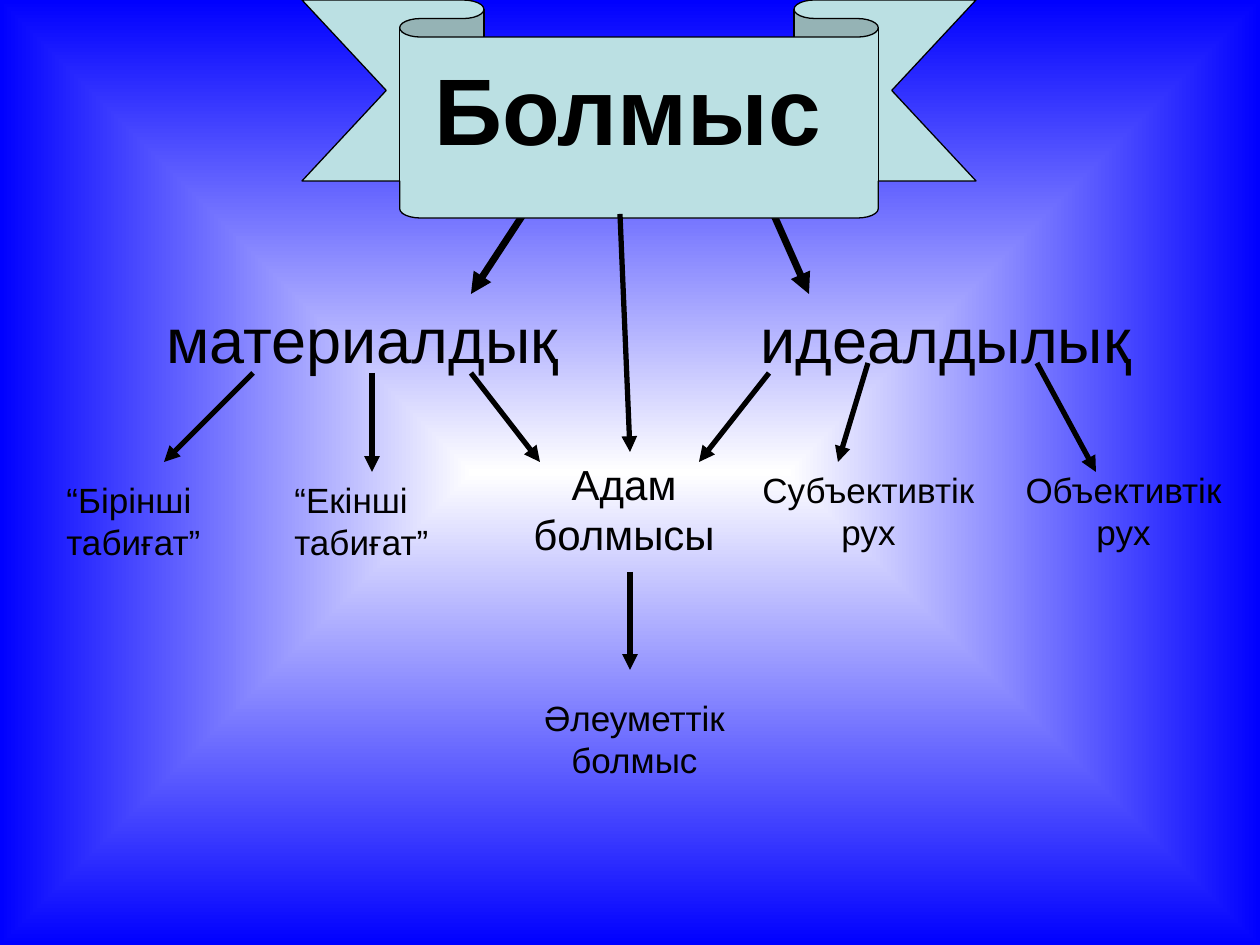
from lxml import etree
from pptx import Presentation
from pptx.dml.color import RGBColor
from pptx.enum.shapes import MSO_CONNECTOR, MSO_SHAPE
from pptx.enum.text import PP_ALIGN
from pptx.oxml import parse_xml
from pptx.oxml.ns import nsdecls, qn
from pptx.util import Pt

STRAIGHT = MSO_CONNECTOR.STRAIGHT
RIBBON = MSO_SHAPE.DOWN_RIBBON
LEFT, CENTER = PP_ALIGN.LEFT, PP_ALIGN.CENTER

BLACK = RGBColor(0, 0, 0)
WHITE = RGBColor(255, 255, 255)
BLUE = RGBColor(0, 0, 255)
PALE = RGBColor(0xBB, 0xE0, 0xE3)
FONT = "Arial"
SCALE = 914400 / 126


def px(n):
    return round(n * SCALE)


def label(slide, box, text, size, align=LEFT, bold=False):
    frame = slide.shapes.add_textbox(*map(px, box)).text_frame
    frame.word_wrap = True
    para = frame.paragraphs[0]
    para.text = text
    para.alignment = align
    font = para.font
    font.name, font.size, font.bold = FONT, Pt(size), bold
    font.color.rgb = BLACK


def arrow(slide, ends, width=3):
    link = slide.shapes.add_connector(STRAIGHT, *map(px, ends))
    link.line.color.rgb = BLACK
    link.line.width = Pt(width)
    etree.SubElement(link.line._get_or_add_ln(), qn("a:tailEnd"), type="triangle")
    etree.SubElement(link._element.spPr, qn("a:effectLst"))


def backdrop(slide):
    fill = slide.background.fill
    fill.gradient()
    for stop, color, place in zip(fill.gradient_stops, (WHITE, BLUE), (0, 1)):
        stop.color.rgb = color
        stop.position = place
    # Rectangular gradient that spreads from the centre
    lin = next(slide.background._cSld.iter(qn("a:lin")))
    lin.getparent().replace(lin, parse_xml(
        f'<a:path {nsdecls("a")} path="shape">'
        '<a:fillToRect l="50000" t="50000" r="50000" b="50000"/></a:path>'))


def banner(slide, box, text):
    x, y, w, h = box
    shape = slide.shapes.add_shape(RIBBON, *map(px, box))
    shape.shadow.inherit = False
    shape.adjustments[0], shape.adjustments[1] = 0.17, 0.71
    shape.fill.solid()
    shape.fill.fore_color.rgb = PALE
    shape.line.color.rgb = BLACK
    shape.line.width = Pt(0.75)
    label(slide, (x + 120, y + 45, w - 228, h - 92), text, 54, bold=True)


def branch(slide, box, text, inlet, outlets):
    """Place a heading with one arrow into it and several out of it."""
    x, y = box[:2]

    def shift(ends):
        a, b, c, d = ends
        return x + a, y + b, x + c, y + d

    arrow(slide, shift(inlet), 4)
    label(slide, box, text, 36)
    for ends in outlets:
        arrow(slide, shift(ends))


BRANCHES = [
    ((154, 294, 447, 88), "материалдық", (376, -90, 317, 0),
     [(99, 79, 10, 168), (218, 79, 218, 178), (317, 79, 386, 168)]),
    ((748, 294, 397, 88), "идеалдылық", (21, -90, 61, 0),
     [(21, 79, -49, 168), (120, 69, 90, 168), (289, 69, 348, 178)]),
]
LEAVES = [
    ((54, 472, 189, 97), "“Бірінші табиғат”", 20, LEFT),
    ((282, 472, 179, 97), "“Екінші табиғат”", 20, LEFT),
    ((520, 452, 208, 113), "Адам болмысы", 24, CENTER),
    ((730, 462, 277, 97), "Субъективтік рух", 20, CENTER),
    ((1007, 462, 233, 97), "Объективтік рух", 20, CENTER),
    ((491, 690, 287, 97), "Әлеуметтік болмыс", 20, CENTER),
]


def main():
    deck = Presentation()
    deck.slide_width, deck.slide_height = px(1260), px(945)
    slide = deck.slides.add_slide(deck.slide_layouts[6])
    backdrop(slide)

    # Two branches, their upper arrows tucked under the banner
    for item in BRANCHES:
        branch(slide, *item)
    banner(slide, (302, 0, 674, 218), "Болмыс")

    # Middle path
    arrow(slide, (620, 214, 630, 452))
    arrow(slide, (630, 572, 630, 670))

    # Lowest terms
    for item in LEAVES:
        label(slide, *item)

    deck.save("out.pptx")


if __name__ == "__main__":
    main()
